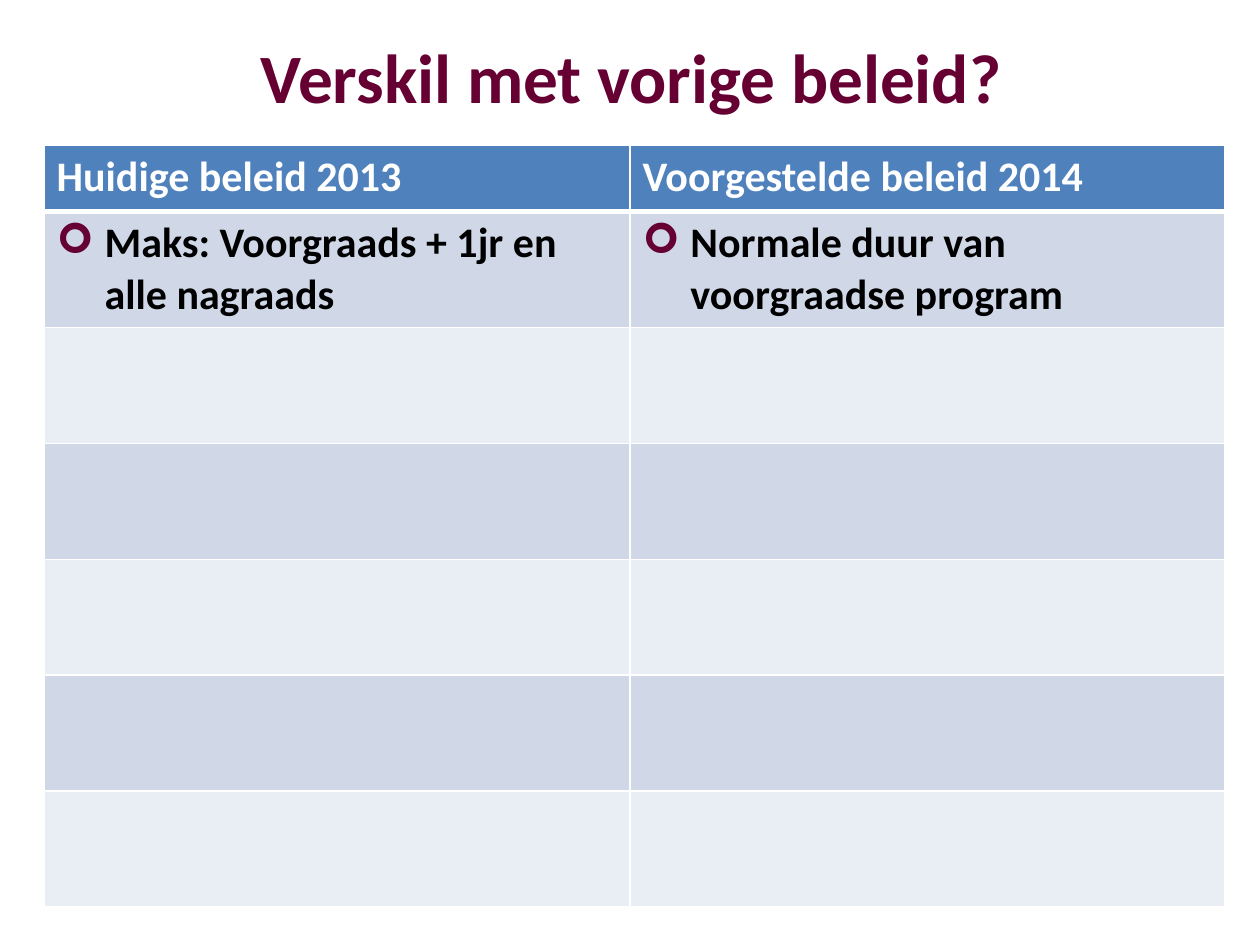
from dataclasses import dataclass

from lxml import etree
from pptx import Presentation
from pptx.dml.color import RGBColor
from pptx.enum.text import MSO_ANCHOR, PP_ALIGN
from pptx.oxml.ns import qn
from pptx.util import Inches, Pt

CENTER = PP_ALIGN.CENTER
LEFT = PP_ALIGN.LEFT
MIDDLE = MSO_ANCHOR.MIDDLE
TITLE_ONLY = 5


@dataclass(frozen=True)
class Theme:
    font: str = "Calibri"
    title_size: float = 39.6
    table_size: float = 24
    accent: str = "660033"
    header_fill: str = "4F81BD"
    bands: tuple = ("D0D8E8", "E9EDF4")
    light: str = "FFFFFF"
    dark: str = "000000"
    border: float = 1
    header_border: float = 3


THEME = Theme()
POLICIES = [
    ("Huidige beleid 2013", "Voorgestelde beleid 2014"),
    ("Maks: Voorgraads + 1jr en alle nagraads", "Normale duur van voorgraadse program"),
]
EMPTY_ROWS = 5
COLUMN_WIDTHS = (4.65, 4.72)
HEADER_HEIGHT = 0.53
BODY_HEIGHT = 0.92


def write(frame, text, size, color, alignment):
    frame.text = text
    paragraph = frame.paragraphs[0]
    paragraph.alignment = alignment
    font = paragraph.runs[0].font
    font.name = THEME.font
    font.size = Pt(size)
    font.bold = True
    font.color.rgb = RGBColor.from_string(color)
    return paragraph


def add_color(parent, color):
    etree.SubElement(parent, qn("a:srgbClr"), val=color)


def add_bullet(paragraph):
    properties = paragraph._p.get_or_add_pPr()
    properties.set("marL", str(Inches(0.38)))
    properties.set("indent", str(Inches(-0.38)))
    add_color(etree.SubElement(properties, qn("a:buClr")), THEME.accent)
    etree.SubElement(properties, qn("a:buFont"), typeface="Wingdings")
    etree.SubElement(properties, qn("a:buChar"), char="➢")


def add_borders(cell, top, bottom):
    properties = cell._tc.get_or_add_tcPr()
    widths = {"lnL": THEME.border, "lnR": THEME.border, "lnT": top, "lnB": bottom}
    for side, width in widths.items():
        line = etree.SubElement(properties, qn(f"a:{side}"), w=str(Pt(width)))
        add_color(etree.SubElement(line, qn("a:solidFill")), THEME.light)


def style_cell(cell, row):
    top = THEME.header_border if row == 1 else THEME.border
    bottom = THEME.header_border if row == 0 else THEME.border
    add_borders(cell, top, bottom)
    fill = THEME.header_fill if row == 0 else THEME.bands[(row - 1) % 2]
    cell.fill.solid()
    cell.fill.fore_color.rgb = RGBColor.from_string(fill)


def add_title(slide, text):
    title = slide.shapes.title
    title.left, title.top = Inches(0.51), Inches(0.21)
    title.width, title.height = Inches(9), Inches(0.79)
    title.text_frame.vertical_anchor = MIDDLE
    write(title.text_frame, text, THEME.title_size, THEME.accent, CENTER)


def add_policy_table(slide):
    heights = [HEADER_HEIGHT] + [BODY_HEIGHT] * (len(POLICIES) - 1 + EMPTY_ROWS)
    table = slide.shapes.add_table(
        len(heights), len(COLUMN_WIDTHS), Inches(0.35), Inches(1.15),
        Inches(sum(COLUMN_WIDTHS)), Inches(sum(heights)),
    ).table
    for column, width in zip(table.columns, COLUMN_WIDTHS):
        column.width = Inches(width)
    for row, height in enumerate(heights):
        table.rows[row].height = Inches(height)
        for cell in table.rows[row].cells:
            style_cell(cell, row)
    for row, policies in enumerate(POLICIES):
        color = THEME.light if row == 0 else THEME.dark
        for column, policy in enumerate(policies):
            frame = table.cell(row, column).text_frame
            paragraph = write(frame, policy, THEME.table_size, color, LEFT)
            if row > 0:
                add_bullet(paragraph)


def main():
    presentation = Presentation()
    presentation.slide_width = Inches(10)
    presentation.slide_height = Inches(7.5)
    slide = presentation.slides.add_slide(presentation.slide_layouts[TITLE_ONLY])
    add_title(slide, "Verskil met vorige beleid?")
    add_policy_table(slide)
    presentation.save("out.pptx")


if __name__ == "__main__":
    main()
